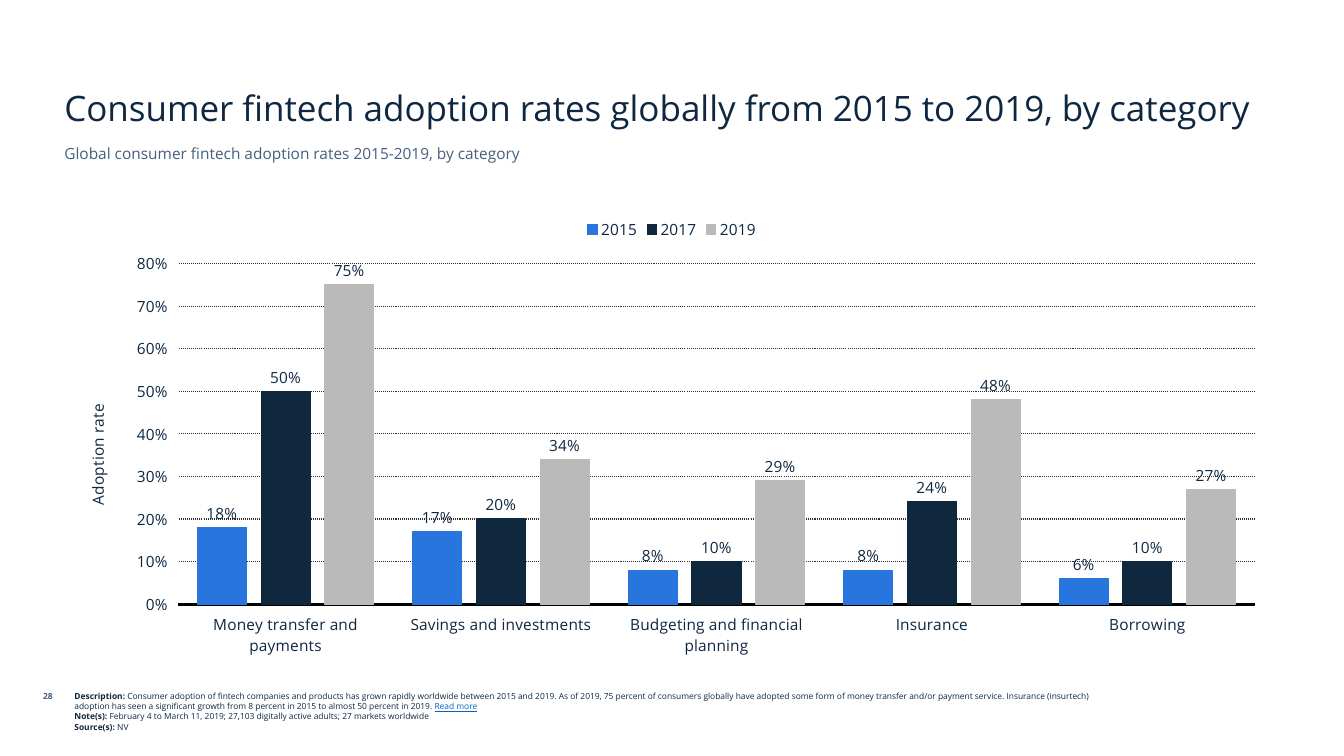
from pptx import Presentation
from pptx.chart.data import CategoryChartData
from pptx.dml.color import RGBColor
from pptx.enum.chart import (
    XL_CHART_TYPE, XL_LABEL_POSITION, XL_LEGEND_POSITION, XL_TICK_LABEL_POSITION, XL_TICK_MARK)
from pptx.enum.dml import MSO_LINE
from pptx.enum.text import MSO_ANCHOR, PP_ALIGN
from pptx.util import Inches, Pt

COLUMNS = XL_CHART_TYPE.COLUMN_CLUSTERED
OUTSIDE_END = XL_LABEL_POSITION.OUTSIDE_END
LEGEND_TOP = XL_LEGEND_POSITION.TOP
LABELS_LOW = XL_TICK_LABEL_POSITION.LOW
NO_TICKS = XL_TICK_MARK.NONE
DOTTED = MSO_LINE.ROUND_DOT
TOP, BOTTOM = MSO_ANCHOR.TOP, MSO_ANCHOR.BOTTOM
LEFT, RIGHT = PP_ALIGN.LEFT, PP_ALIGN.RIGHT

NAVY = RGBColor(0x0F, 0x27, 0x41)
SLATE = RGBColor(0x45, 0x5F, 0x7C)
LINK_BLUE = RGBColor(0x05, 0x63, 0xC1)
GRID_GREY = RGBColor(0x2F, 0x2F, 0x2F)
BLACK = RGBColor(0x00, 0x00, 0x00)
BAR_BLUE = RGBColor(0x28, 0x75, 0xDD)
BAR_NAVY = RGBColor(0x0F, 0x28, 0x3E)
BAR_GREY = RGBColor(0xBA, 0xBA, 0xBA)

FONT = "Open Sans"
PERCENT = "#,##0%"
TITLE = {"size": Pt(25), "color": NAVY}
SUBTITLE = {"size": Pt(11), "color": SLATE}
PAGE_NUMBER = {"size": Pt(6), "color": SLATE, "bold": True}
NOTE = {"size": Pt(6), "color": NAVY}
NOTE_HEAD = {**NOTE, "bold": True}
NOTE_LINK = {"size": Pt(6), "color": LINK_BLUE, "underline": True}
CHART_TEXT = {"size": Pt(11), "color": NAVY, "bold": False}

CATEGORIES = ["Money transfer and payments", "Savings and investments",
              "Budgeting and financial planning", "Insurance", "Borrowing"]
SERIES = [
    ("2015", [0.18, 0.17, 0.08, 0.08, 0.06], BAR_BLUE),
    ("2017", [0.5, 0.2, 0.1, 0.24, 0.1], BAR_NAVY),
    ("2019", [0.75, 0.34, 0.29, 0.48, 0.27], BAR_GREY),
]
DESCRIPTION = (
    "Consumer adoption of fintech companies and products has grown rapidly worldwide between "
    "2015 and 2019. As of 2019, 75 percent of consumers globally have adopted some form of money "
    "transfer and/or payment service. Insurance (insurtech) adoption has seen a significant "
    "growth from 8 percent in 2015 to almost 50 percent in 2019. ")
NOTES = [
    [("Description: ", NOTE_HEAD), (DESCRIPTION, NOTE), ("Read more", NOTE_LINK)],
    [("Note(s): ", NOTE_HEAD),
     ("February 4 to March 11, 2019; 27,103 digitally active adults; 27 markets worldwide", NOTE)],
    [("Source(s): ", NOTE_HEAD), ("NV", NOTE)],
]


def style_font(font, style):
    """Apply a dict of format values to a font."""
    font.name = FONT
    for key, value in style.items():
        if key == "color":
            font.color.rgb = value
        else:
            setattr(font, key, value)


def style_line(line, color, width):
    """Give a line its colour and its width in points."""
    line.color.rgb = color
    line.width = Pt(width)


def add_text(page, place, paragraphs, align=LEFT, anchor=TOP):
    """Add a text box whose paragraphs are lists of (text, style) spans."""
    box = page.shapes.add_textbox(*map(Inches, place))
    frame = box.text_frame
    frame.word_wrap = True
    frame.vertical_anchor = anchor
    for index, spans in enumerate(paragraphs):
        para = frame.add_paragraph() if index else frame.paragraphs[0]
        para.alignment = align
        for text, style in spans:
            span = para.add_run()
            span.text = text
            style_font(span.font, style)


def style_axes(chart):
    """Format the category axis, the value axis and its grid."""
    for axis in (chart.category_axis, chart.value_axis):
        axis.major_tick_mark = axis.minor_tick_mark = NO_TICKS
        axis.tick_label_position = LABELS_LOW
        style_font(axis.tick_labels.font, CHART_TEXT)
    style_line(chart.category_axis.format.line, BLACK, 2)

    rates = chart.value_axis
    rates.minimum_scale, rates.maximum_scale, rates.major_unit = 0, 0.8, 0.1
    rates.tick_labels.number_format = PERCENT
    rates.tick_labels.number_format_is_linked = False
    rates.format.line.fill.background()
    grid = rates.major_gridlines.format.line
    style_line(grid, GRID_GREY, 0.75)
    grid.dash_style = DOTTED
    para = rates.axis_title.text_frame.paragraphs[0]
    span = para.add_run()
    span.text = "Adoption rate"
    style_font(span.font, CHART_TEXT)


def style_series(series, color):
    """Colour one series and label its columns."""
    series.format.fill.solid()
    series.format.fill.fore_color.rgb = color
    style_line(series.format.line, color, 0.75)
    labels = series.data_labels
    labels.show_value = True
    labels.position = OUTSIDE_END
    labels.number_format = PERCENT
    labels.number_format_is_linked = False
    style_font(labels.font, CHART_TEXT)


def add_adoption_chart(page, place):
    """Add the clustered columns of adoption rates."""
    data = CategoryChartData(number_format=PERCENT)
    data.categories = CATEGORIES
    for name, values, _ in SERIES:
        data.add_series(name, values)
    chart = page.shapes.add_chart(COLUMNS, *map(Inches, place), data).chart
    style_font(chart.font, CHART_TEXT)
    chart.has_title = False
    chart.has_legend = True
    chart.legend.position = LEGEND_TOP
    chart.legend.include_in_layout = False
    style_font(chart.legend.font, CHART_TEXT)
    plot = chart.plots[0]
    plot.gap_width, plot.overlap, plot.vary_by_categories = 80, -30, False
    for series, (_, _, color) in zip(plot.series, SERIES):
        style_series(series, color)
    style_axes(chart)


def main():
    """Build the slide and save it."""
    deck = Presentation()
    deck.slide_width, deck.slide_height = Inches(13.33), Inches(7.5)
    page = deck.slides.add_slide(deck.slide_layouts[6])
    add_text(page, (0.64, 6.81, 10.47, 0.58), NOTES)
    add_adoption_chart(page, (0.64, 2.06, 12.05, 4.54))
    add_text(page, (-0.1, 6.81, 0.72, 0.3), [[("28", PAGE_NUMBER)]], align=RIGHT)
    add_text(page, (0.54, 0.46, 12.24, 0.86), [[
        ("Consumer fintech adoption rates globally from 2015 to 2019, by category", TITLE)]],
        anchor=BOTTOM)
    add_text(page, (0.54, 1.38, 12.24, 0.34), [[
        ("Global consumer fintech adoption rates 2015-2019, by category", SUBTITLE)]])
    deck.save("out.pptx")


if __name__ == "__main__":
    main()
